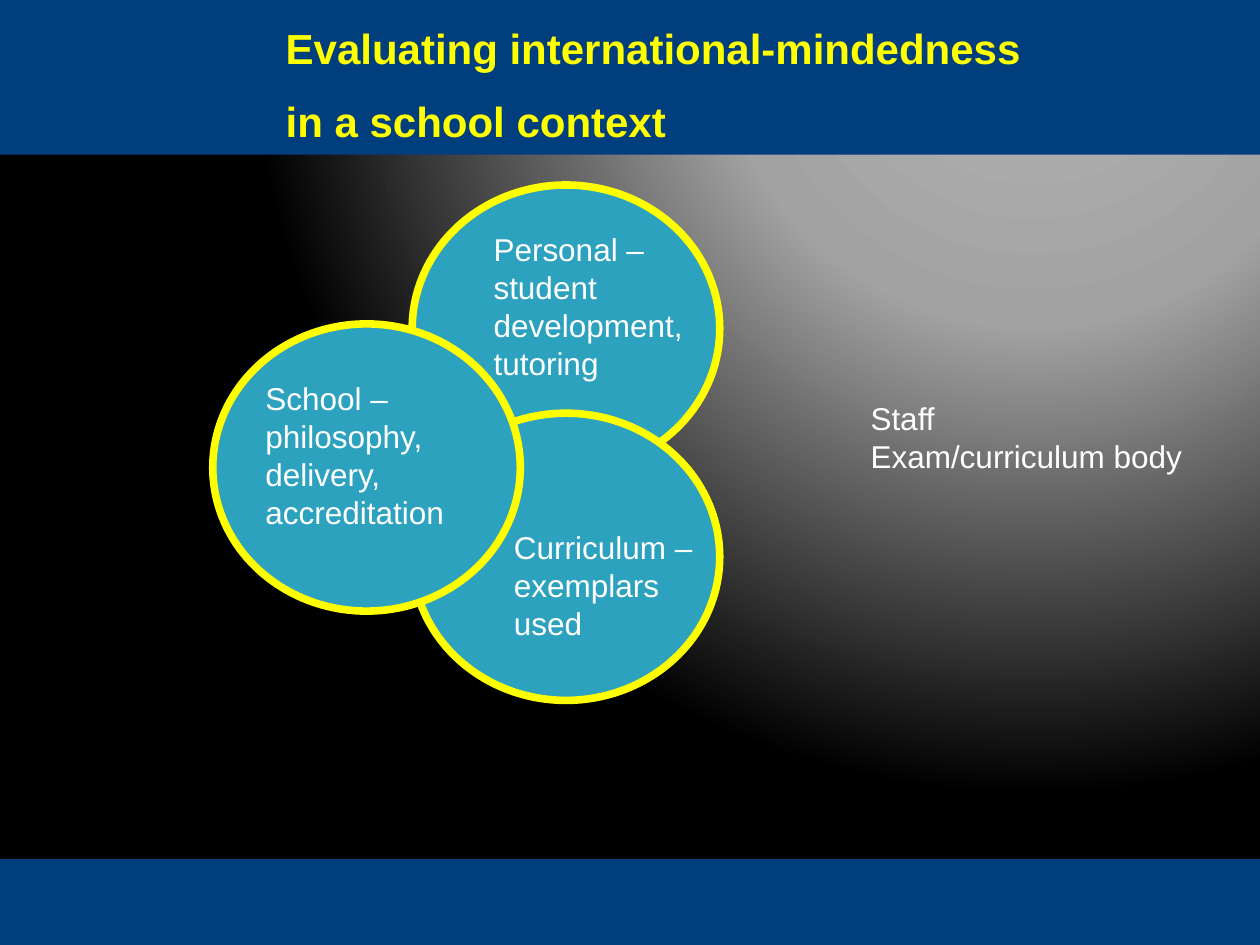
from lxml import etree
from pptx import Presentation
from pptx.dml.color import RGBColor
from pptx.enum.shapes import MSO_SHAPE
from pptx.enum.text import MSO_AUTO_SIZE
from pptx.oxml.ns import qn
from pptx.util import Cm, Pt

RECTANGLE = MSO_SHAPE.RECTANGLE
OVAL = MSO_SHAPE.OVAL
FIT_SHAPE = MSO_AUTO_SIZE.SHAPE_TO_FIT_TEXT

NAVY = RGBColor(0x00, 0x3E, 0x7E)
TEAL = RGBColor(0x2D, 0xA2, 0xBF)
YELLOW = RGBColor(0xFF, 0xFF, 0x00)
WHITE = RGBColor(0xFF, 0xFF, 0xFF)
LIGHT_GREY = RGBColor(0xB4, 0xB4, 0xB4)
MID_GREY = RGBColor(0xA2, 0xA2, 0xA2)
BLACK = RGBColor(0x00, 0x00, 0x00)

SLIDE_WIDTH, SLIDE_HEIGHT = 25.4, 19.05
CIRCLE_WIDTH, CIRCLE_HEIGHT = 6.2, 5.79


class SlideBuilder:
    font_name = "Arial"
    outline_width = Pt(4.33)

    def __init__(self, slide):
        self.slide = slide

    def glow_background(self, stops, focus):
        self.slide.background.fill.gradient()
        gradient = self.slide.element.find(".//" + qn("a:gradFill"))
        for child in list(gradient):
            gradient.remove(child)
        stop_list = etree.SubElement(gradient, qn("a:gsLst"))
        for percent, color in stops:
            stop = etree.SubElement(stop_list, qn("a:gs"), pos=str(percent * 1000))
            etree.SubElement(stop, qn("a:srgbClr"), val=str(color))
        glow = etree.SubElement(gradient, qn("a:path"), {"path": "circle"})
        edges = {side: str(percent * 1000) for side, percent in focus.items()}
        etree.SubElement(glow, qn("a:fillToRect"), edges)

    def shape(self, kind, left, top, width, height, color):
        shape = self.slide.shapes.add_shape(
            kind, Cm(left), Cm(top), Cm(width), Cm(height))
        shape.shadow.inherit = False
        shape.fill.solid()
        shape.fill.fore_color.rgb = color
        return shape

    def band(self, top, height):
        band = self.shape(RECTANGLE, 0, top, SLIDE_WIDTH, height, NAVY)
        band.line.fill.background()

    def circle(self, left, top):
        circle = self.shape(OVAL, left, top, CIRCLE_WIDTH, CIRCLE_HEIGHT, TEAL)
        circle.line.color.rgb = YELLOW
        circle.line.width = self.outline_width

    def text(self, content, left, top, width, height, size=18, color=WHITE,
             bold=False, wrap=False, gap=0):
        box = self.slide.shapes.add_textbox(
            Cm(left), Cm(top), Cm(width), Cm(height))
        frame = box.text_frame
        frame.word_wrap = wrap
        frame.auto_size = FIT_SHAPE
        frame.text = content
        for index, paragraph in enumerate(frame.paragraphs):
            paragraph.space_before = Pt(gap if index else 0)
            for run in paragraph.runs:
                run.font.name = self.font_name
                run.font.size = Pt(size)
                run.font.bold = bold
                run.font.color.rgb = color


def main():
    presentation = Presentation()
    presentation.slide_width = Cm(SLIDE_WIDTH)
    presentation.slide_height = Cm(SLIDE_HEIGHT)
    builder = SlideBuilder(
        presentation.slides.add_slide(presentation.slide_layouts[6]))

    builder.glow_background(
        [(0, LIGHT_GREY), (40, MID_GREY), (100, BLACK)],
        {"l": 65, "t": 0, "r": 0, "b": 98})
    builder.band(17.32, 1.73)
    builder.band(0, 3.12)
    builder.text("Evaluating international-mindedness\nin a school context",
                 5.51, 0.33, 19.2, 2.82, size=24, color=YELLOW, bold=True,
                 wrap=True, gap=13)

    for left, top in [(8.31, 3.73), (8.31, 8.33), (4.29, 6.53)]:
        builder.circle(left, top)

    builder.text("School –\nphilosophy,\ndelivery,\naccreditation",
                 5.1, 7.52, 4.8, 3.33, wrap=True)
    builder.text("Personal –\nstudent\ndevelopment,\ntutoring",
                 9.7, 4.52, 4.55, 3.33)
    builder.text("Curriculum –\nexemplars\nused", 10.11, 10.52, 4.14, 2.57)
    builder.text("Staff\nExam/curriculum body", 17.3, 7.92, 6.86, 1.8)

    presentation.save("out.pptx")


if __name__ == "__main__":
    main()
